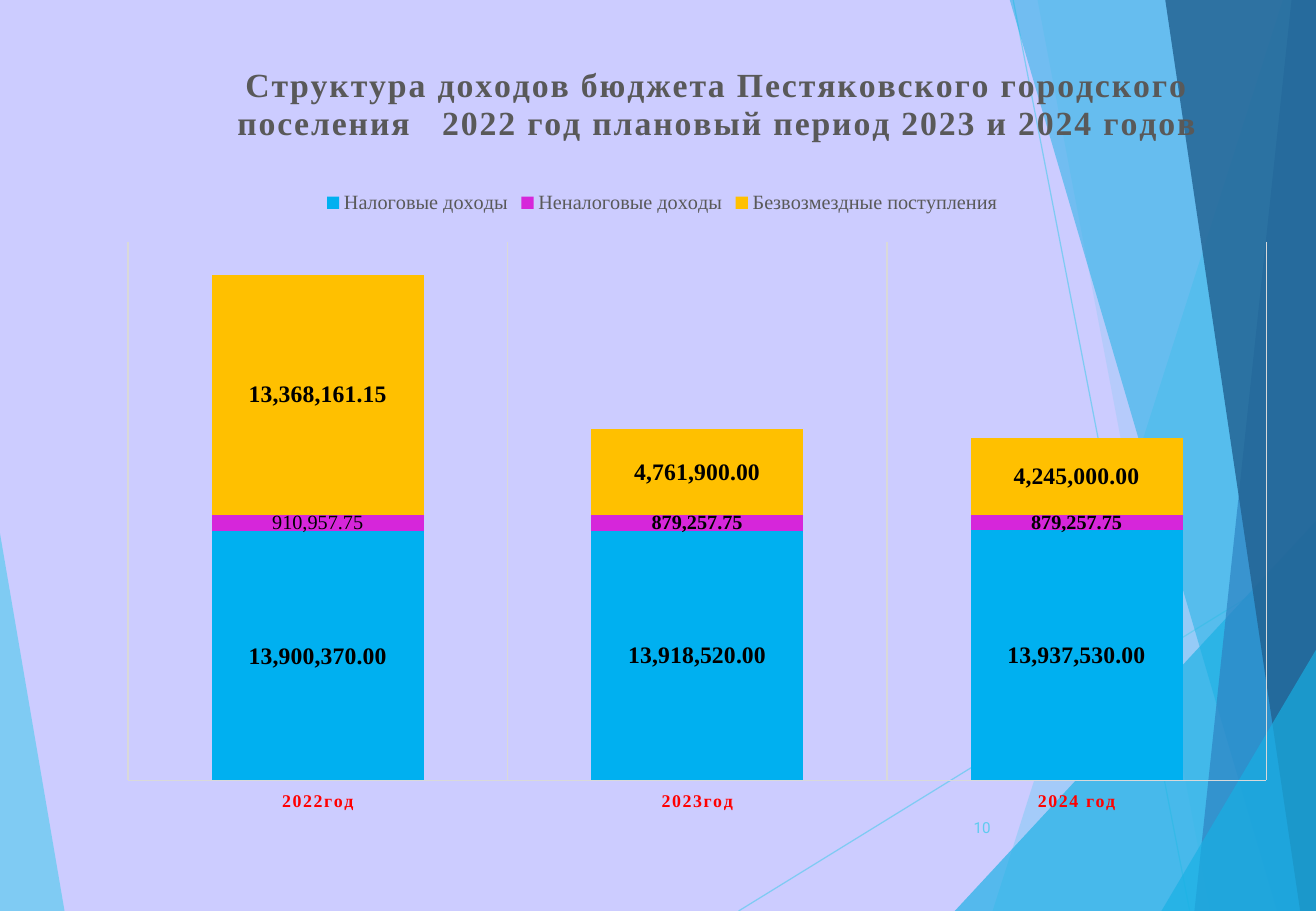
from dataclasses import dataclass

from lxml import etree
from pptx import Presentation
from pptx.chart.data import CategoryChartData
from pptx.dml.color import RGBColor
from pptx.enum.chart import XL_CHART_TYPE, XL_LEGEND_POSITION, XL_TICK_LABEL_POSITION, XL_TICK_MARK
from pptx.enum.shapes import MSO_CONNECTOR
from pptx.enum.text import MSO_ANCHOR, PP_ALIGN
from pptx.oxml.ns import qn
from pptx.util import Cm, Pt

STACKED = XL_CHART_TYPE.COLUMN_STACKED
TOP = XL_LEGEND_POSITION.TOP
LOW = XL_TICK_LABEL_POSITION.LOW
NO_TICK = XL_TICK_MARK.NONE
STRAIGHT = MSO_CONNECTOR.STRAIGHT
MIDDLE = MSO_ANCHOR.MIDDLE
RIGHT = PP_ALIGN.RIGHT

WIDE, HIGH = 27.51, 19.05
MONEY = "#,##0.00"


@dataclass(frozen=True)
class Theme:
    back: str = "CCCCFF"
    sky: str = "5FCBEF"
    aqua: str = "17B0E4"
    blue: str = "2E83C3"
    navy: str = "226292"
    grey: str = "595959"
    rule: str = "D9D9D9"
    ink: str = "000000"
    year: str = "FF0000"
    tax: str = "00B0F0"
    fee: str = "D626DA"
    grant: str = "FFC000"
    serif: str = "Times New Roman"
    sans: str = "Roboto"
    head: float = 20
    large: float = 14
    small: float = 12
    axis: float = 10.6
    base: float = 10
    page: float = 9


THEME = Theme()

TITLE = ("Структура доходов бюджета Пестяковского городского поселения   "
         "2022 год плановый период 2023 и 2024 годов")
YEARS = ["2022год", "2023год", "2024 год"]
INCOME = [
    ("Налоговые доходы", [13900370, 13918520, 13937530], THEME.tax, THEME.large),
    ("Неналоговые доходы", [910957.75, 879257.75, 879257.75], THEME.fee, THEME.small),
    ("Безвозмездные поступления", [13368161.15, 4761900, 4245000], THEME.grant, THEME.large),
]

LEFT = ([(0, 11.15), (1.35, HIGH), (0, HIGH)], THEME.sky, 70)
RAYS = [((15.44, HIGH), (WIDE, 11.61)), ((21.18, 0), (24.87, HIGH))]
FACETS = [
    ([(26.82, 0), (20.75, HIGH), (WIDE, HIGH), (WIDE, 0)], THEME.sky, 36),
    ([(21.69, 0), (25.3, HIGH), (WIDE, HIGH), (WIDE, 0)], THEME.sky, 20),
    ([(19.96, HIGH), (WIDE, 10.9), (WIDE, HIGH)], THEME.aqua, 66),
    ([(21.11, 0), (26.7, HIGH), (WIDE, HIGH), (WIDE, 0)], THEME.aqua, 50),
    ([(27, 0), (24.97, HIGH), (WIDE, HIGH), (WIDE, 0)], THEME.blue, 70),
    ([(24.36, 0), (27.18, HIGH), (WIDE, HIGH), (WIDE, 0)], THEME.navy, 82),
    ([(24.28, HIGH), (WIDE, 13.59), (WIDE, HIGH)], THEME.aqua, 66),
]


class Page:
    def __init__(self, slide, theme):
        self.slide = slide
        self.theme = theme
        self.paint(slide.background.fill, theme.back)

    def paint(self, fill, color, alpha=100):
        fill.solid()
        fill.fore_color.rgb = RGBColor.from_string(color)

    def fade(self, shape, alpha):
        for node in shape._element.spPr.iter(qn("a:srgbClr")):
            etree.SubElement(node, qn("a:alpha")).set("val", str(alpha * 1000))

    def style(self, font, size, color, name, bold=False):
        font.size = Pt(size)
        font.color.rgb = RGBColor.from_string(color)
        font.name = name
        font.bold = bold

    def space(self, font):
        font._element.set("spc", "100")

    def facet(self, points, color, alpha):
        spots = [(Cm(x), Cm(y)) for x, y in points]
        pen = self.slide.shapes.build_freeform(*spots[0])
        pen.add_line_segments(spots[1:], close=True)
        shape = pen.convert_to_shape()
        shape.shadow.inherit = False
        shape.line.fill.background()
        self.paint(shape.fill, color)
        self.fade(shape, alpha)

    def ray(self, start, end):
        ends = [Cm(v) for v in start + end]
        line = self.slide.shapes.add_connector(STRAIGHT, *ends)
        self.paint(line.line.fill, self.theme.sky)
        line.line.width = Pt(0.75)
        self.fade(line, 70)
        etree.SubElement(line._element.spPr, qn("a:effectLst"))

    def text(self, words, box):
        frame = self.slide.shapes.add_textbox(*[Cm(v) for v in box]).text_frame
        frame.word_wrap = True
        frame.vertical_anchor = MIDDLE
        para = frame.paragraphs[0]
        para.text = words
        para.alignment = RIGHT
        self.style(para.font, self.theme.page, self.theme.sky, self.theme.sans)

    def place(self, host, index, inner=False, **sizes):
        old = host.find(qn("c:layout"))
        if old is not None:
            host.remove(old)
        layout = etree.Element(qn("c:layout"))
        manual = etree.SubElement(layout, qn("c:manualLayout"))
        parts = [("layoutTarget", "inner")] if inner else []
        parts += [("xMode", "edge"), ("yMode", "edge"), *sizes.items()]
        for tag, value in parts:
            etree.SubElement(manual, qn("c:" + tag)).set("val", str(value))
        host.insert(index, layout)

    def chart(self, box):
        look = self.theme
        data = CategoryChartData(number_format=MONEY)
        data.categories = YEARS
        for name, values, _, _ in INCOME:
            data.add_series(name, values)
        frame = self.slide.shapes.add_chart(STACKED, *[Cm(v) for v in box], data)
        chart = frame.chart
        self.style(chart.font, look.base, look.ink, look.sans)
        self.heading(chart)
        self.legend(chart)
        self.axes(chart)
        self.bars(chart.plots[0])
        area = chart._chartSpace.chart.plotArea
        self.place(area, 0, inner=True, x=0.054, y=0.254, w=0.894, h=0.628)

    def heading(self, chart):
        title = chart.chart_title
        para = title.text_frame.paragraphs[0]
        para.text = TITLE
        self.style(para.font, self.theme.head, self.theme.grey, self.theme.serif, True)
        self.space(para.font)
        title.include_in_layout = False
        self.place(title._element, 1, x=0.135, y=0.038)

    def legend(self, chart):
        chart.has_legend = True
        legend = chart.legend
        legend.position = TOP
        legend.include_in_layout = False
        self.style(legend.font, self.theme.small, self.theme.grey, self.theme.serif)
        self.place(legend._element, 1, x=0.205, y=0.19)

    def axes(self, chart):
        look = self.theme
        money = chart.value_axis
        money.visible = False
        money.has_major_gridlines = False
        money.minimum_scale = 0
        money.maximum_scale = 30000000
        years = chart.category_axis
        years.has_major_gridlines = True
        years.major_tick_mark = NO_TICK
        years.tick_label_position = LOW
        for line in (years.format.line, years.major_gridlines.format.line):
            self.paint(line.fill, look.rule)
            line.width = Pt(0.75)
        font = years.tick_labels.font
        self.style(font, look.axis, look.year, look.serif, True)
        self.space(font)

    def bars(self, plot):
        look = self.theme
        plot.gap_width = 79
        plot.overlap = 100
        plot.vary_by_categories = False
        for bar, (_, _, color, size) in zip(plot.series, INCOME):
            self.paint(bar.format.fill, color)
            labels = bar.data_labels
            labels.show_value = True
            labels.number_format = MONEY
            labels.number_format_is_linked = False
            self.style(labels.font, size, look.ink, look.serif, True)
        first = plot.series[1].points[0].data_label
        self.style(first.font, look.small, look.ink, look.serif)


def main():
    deck = Presentation()
    deck.slide_width, deck.slide_height = Cm(WIDE), Cm(HIGH)
    page = Page(deck.slides.add_slide(deck.slide_layouts[6]), THEME)
    page.facet(*LEFT)
    for ray in RAYS:
        page.ray(*ray)
    for facet in FACETS:
        page.facet(*facet)
    page.chart((1.24, 0.51, 26.62, 17.93))
    page.text("10", (19.41, 16.79, 1.55, 1.02))
    deck.save("out.pptx")


if __name__ == "__main__":
    main()
